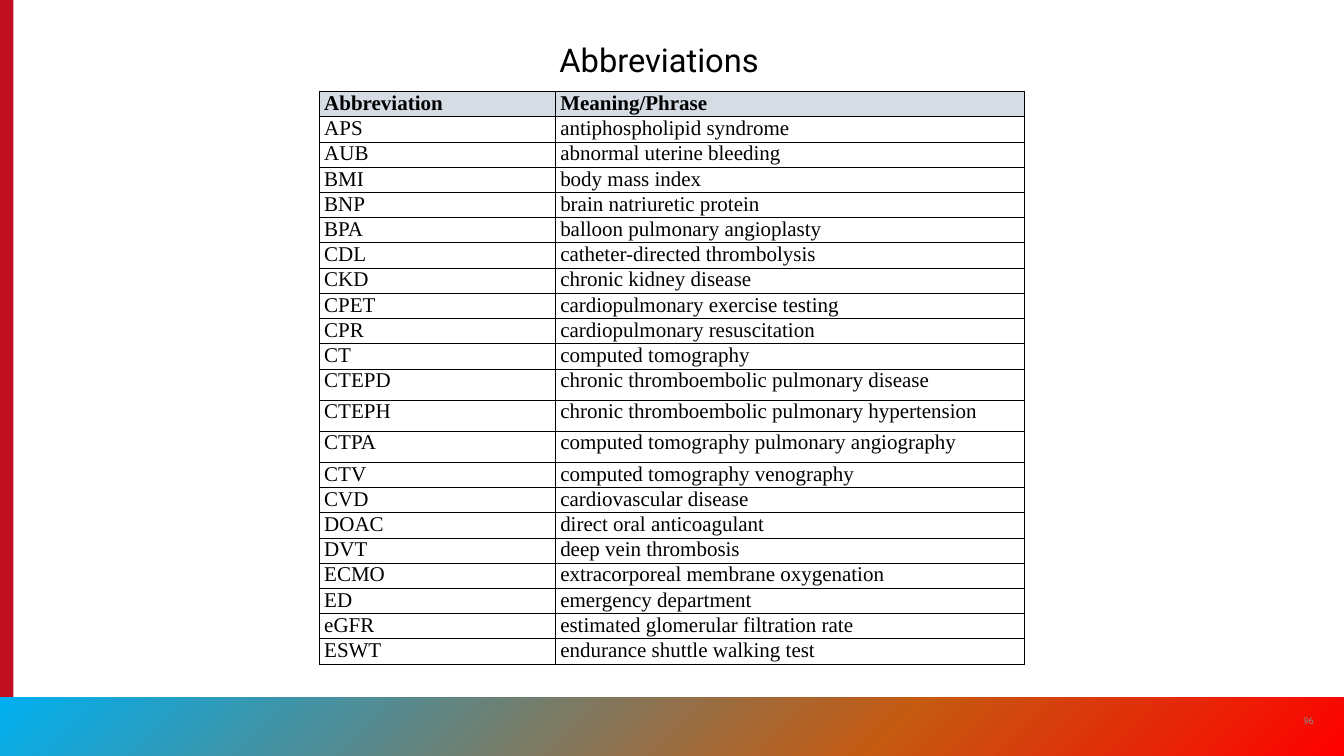
from copy import deepcopy

from lxml import etree
from pptx import Presentation
from pptx.dml.color import RGBColor
from pptx.enum.shapes import MSO_SHAPE
from pptx.enum.text import MSO_ANCHOR, PP_ALIGN
from pptx.oxml.ns import qn
from pptx.util import Inches, Pt

RECTANGLE = MSO_SHAPE.RECTANGLE
TOP, MIDDLE = MSO_ANCHOR.TOP, MSO_ANCHOR.MIDDLE
LEFT, CENTER = PP_ALIGN.LEFT, PP_ALIGN.CENTER
TITLE_ONLY = 5

HEADINGS = ("Abbreviation", "Meaning/Phrase")
ABBREVIATIONS = [
    ("APS", "antiphospholipid syndrome"),
    ("AUB", "abnormal uterine bleeding"),
    ("BMI", "body mass index"),
    ("BNP", "brain natriuretic protein"),
    ("BPA", "balloon pulmonary angioplasty"),
    ("CDL", "catheter-directed thrombolysis"),
    ("CKD", "chronic kidney disease"),
    ("CPET", "cardiopulmonary exercise testing"),
    ("CPR", "cardiopulmonary resuscitation"),
    ("CT", "computed tomography"),
    ("CTEPD", "chronic thromboembolic pulmonary disease"),
    ("CTEPH", "chronic thromboembolic pulmonary hypertension"),
    ("CTPA", "computed tomography pulmonary angiography"),
    ("CTV", "computed tomography venography"),
    ("CVD", "cardiovascular disease"),
    ("DOAC", "direct oral anticoagulant"),
    ("DVT", "deep vein thrombosis"),
    ("ECMO", "extracorporeal membrane oxygenation"),
    ("ED", "emergency department"),
    ("eGFR", "estimated glomerular filtration rate"),
    ("ESWT", "endurance shuttle walking test"),
]
TALL_ROWS = ("CTEPD", "CTEPH", "CTPA")


def color(value):
    return RGBColor.from_string(value)


class SlideBuilder:
    """Holds the slide and its style, and draws each kind of element."""

    heading_font = "Roboto"
    table_font = "Times New Roman"
    black = "000000"
    gray = "8A8B8A"
    red = "C10E21"
    header_fill = "D5DCE4"

    def __init__(self, slide):
        self.slide = slide

    def format_text(self, paragraph, font_name, size, text_color, bold=False, align=LEFT):
        paragraph.alignment = align
        font = paragraph.font
        font.name, font.size, font.bold = font_name, Pt(size), bold
        font.color.rgb = color(text_color)

    def title(self, text, left, top, width, height):
        shape = self.slide.shapes.title
        shape.left, shape.top = Inches(left), Inches(top)
        shape.width, shape.height = Inches(width), Inches(height)
        frame = shape.text_frame
        frame.text = text
        frame.word_wrap = False
        frame.vertical_anchor = TOP
        self.format_text(frame.paragraphs[0], self.heading_font, 28, self.black)

    def bar(self, left, top, width, height):
        shape = self.slide.shapes.add_shape(
            RECTANGLE, Inches(left), Inches(top), Inches(width), Inches(height))
        shape.shadow.inherit = False
        shape.line.fill.background()
        shape.fill.solid()
        shape.fill.fore_color.rgb = color(self.red)
        return shape

    def gradient_bar(self, left, top, width, height, stops):
        shape = self.bar(left, top, width, height)
        fill = shape.fill
        fill.gradient()
        fill.gradient_angle = 315
        stop_list = shape._element.spPr.find(qn("a:gradFill")).find(qn("a:gsLst"))
        for _ in range(len(stops) - len(stop_list)):
            stop_list.append(deepcopy(stop_list[0]))
        for stop, (position, stop_color) in zip(fill.gradient_stops, stops):
            stop.position = position
            stop.color.rgb = color(stop_color)

    def page_number(self, text, left, top, width, height):
        box = self.slide.shapes.add_textbox(
            Inches(left), Inches(top), Inches(width), Inches(height))
        frame = box.text_frame
        frame.word_wrap = True
        frame.vertical_anchor = MIDDLE
        frame.text = text
        self.format_text(frame.paragraphs[0], self.heading_font, 8, self.gray, align=CENTER)

    def cell_borders(self, cell):
        properties = cell._tc.get_or_add_tcPr()
        for side in ("a:lnL", "a:lnR", "a:lnT", "a:lnB"):
            line = etree.SubElement(properties, qn(side), w=str(Pt(1)))
            fill = etree.SubElement(line, qn("a:solidFill"))
            etree.SubElement(fill, qn("a:srgbClr"), val=self.black)

    def cell(self, cell, text, is_header):
        cell.margin_left = cell.margin_right = Inches(0.06)
        cell.margin_top = cell.margin_bottom = 0
        cell.text = text
        paragraph = cell.text_frame.paragraphs[0]
        properties = paragraph._p.get_or_add_pPr()
        properties.set("marL", str(Inches(0.25)))
        properties.set("indent", str(-Inches(0.25)))
        paragraph.space_after = Pt(8)
        self.format_text(paragraph, self.table_font, 18, self.black, bold=is_header)
        self.cell_borders(cell)
        if is_header:
            cell.fill.solid()
            cell.fill.fore_color.rgb = color(self.header_fill)
        else:
            cell.fill.background()

    def table(self, rows, left, top, column_widths, row_heights):
        table = self.slide.shapes.add_table(
            len(rows), len(column_widths), Inches(left), Inches(top),
            Inches(sum(column_widths)), Inches(sum(row_heights))).table
        table.horz_banding = False
        for column, width in zip(table.columns, column_widths):
            column.width = Inches(width)
        for index, (row, height) in enumerate(zip(table.rows, row_heights)):
            row.height = Inches(height)
            for cell, text in zip(row.cells, rows[index]):
                self.cell(cell, text, index == 0)


def main():
    presentation = Presentation()
    presentation.slide_width, presentation.slide_height = Inches(16), Inches(9)
    slide = presentation.slides.add_slide(presentation.slide_layouts[TITLE_ONLY])
    builder = SlideBuilder(slide)
    builder.bar(0, 0, 0.16, 9)
    builder.gradient_bar(0, 8.3, 16, 0.7, [(0, "00B0F0"), (0.66, "C55A11"), (1, "FF0000")])
    builder.page_number("96", 15.34, 8.34, 0.48, 0.48)
    builder.title("Abbreviations", 6.56, 0.42, 2.89, 0.57)
    rows = [HEADINGS] + ABBREVIATIONS
    heights = [0.37 if row[0] in TALL_ROWS else 0.3 for row in rows]
    builder.table(rows, 3.8, 1.09, (2.81, 5.59), heights)
    presentation.save("out.pptx")


if __name__ == "__main__":
    main()
